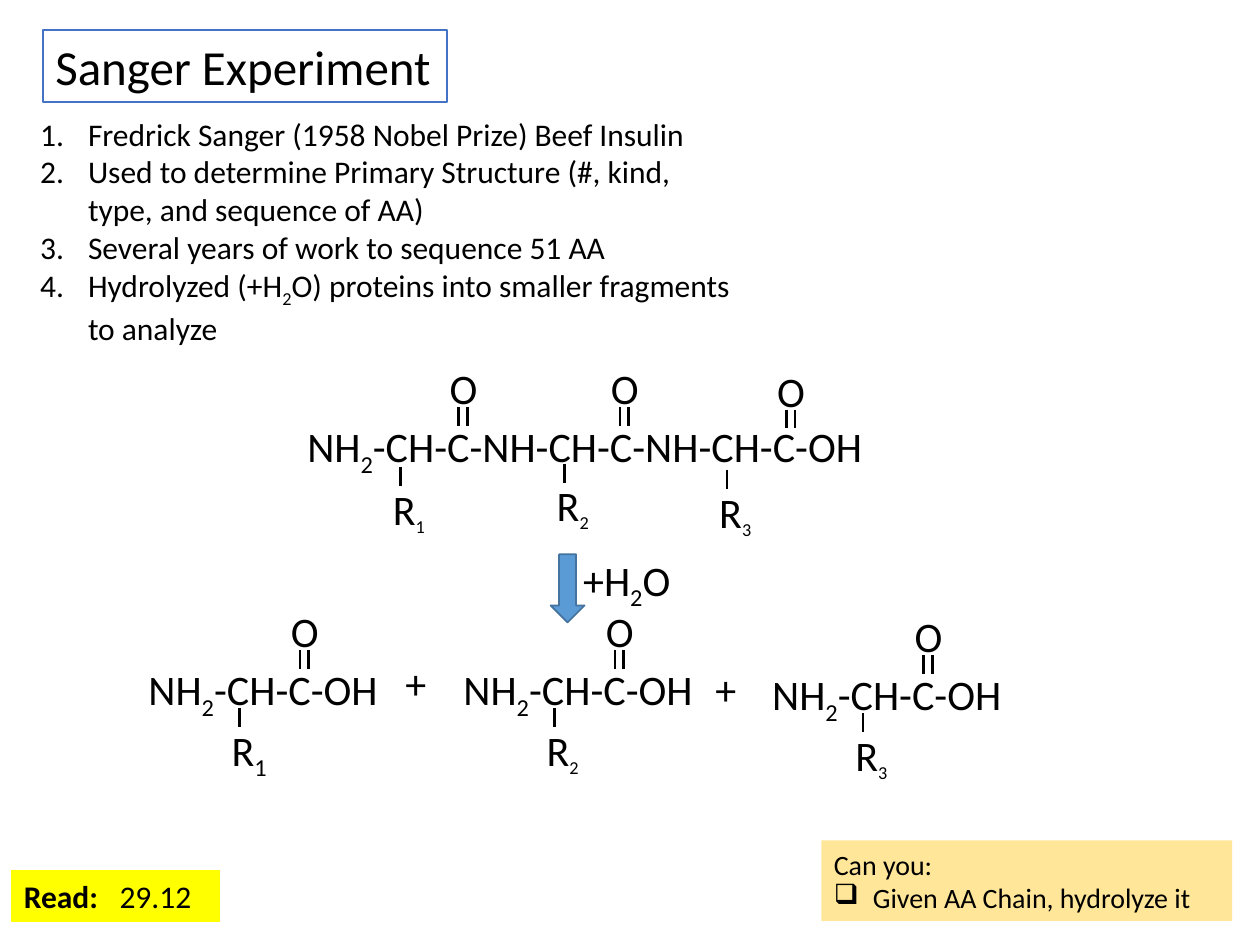
from dataclasses import dataclass
from typing import Any, Optional

import pptx
import pptx.dml.color
import pptx.enum.shapes
import pptx.enum.text
import pptx.oxml.ns
import pptx.util
from lxml import etree

Inches = pptx.util.Inches
Pt = pptx.util.Pt
RGBColor = pptx.dml.color.RGBColor
MSO_SHAPE = pptx.enum.shapes.MSO_SHAPE
qn = pptx.oxml.ns.qn

BLACK = RGBColor(0x00, 0x00, 0x00)
WHITE = RGBColor(0xFF, 0xFF, 0xFF)
TITLE_EDGE = RGBColor(0x44, 0x72, 0xC4)
ARROW_FILL = RGBColor(0x5B, 0x9B, 0xD5)
ARROW_EDGE = RGBColor(0x43, 0x73, 0x9E)
PEACH = RGBColor(0xFF, 0xE6, 0x99)
YELLOW = RGBColor(0xFF, 0xFF, 0x00)


@dataclass(frozen=True)
class Run:
    text: str
    size: float = 24
    sub: bool = False
    bold: bool = False


@dataclass(frozen=True)
class Para:
    runs: tuple[Run, ...]
    bullet: str = ""
    indent: float = 0
    tab: float = 0


@dataclass(frozen=True)
class Box:
    x: float
    y: float
    w: float
    h: float
    fill: RGBColor
    line: Optional[RGBColor] = None
    weight: float = 1
    kind: Any = MSO_SHAPE.RECTANGLE


@dataclass(frozen=True)
class Residue:
    x: float
    y: float
    number: str
    number_size: float = 18


def plain(text: str, size: float = 24) -> Para:
    return Para((Run(text, size),))


def formula(before: str, after: str, size: float = 24) -> tuple[Run, ...]:
    """Runs with a subscript 2 between the two parts."""
    return Run(before, size), Run("2", size, sub=True), Run(after, size)


def format_para(p: Any, para: Para) -> None:
    p.alignment = pptx.enum.text.PP_ALIGN.LEFT
    pPr = p._p.get_or_add_pPr()
    if para.indent:
        pPr.set("marL", str(Inches(para.indent)))
        pPr.set("indent", str(-Inches(para.indent)))
    if para.bullet == "1.":
        etree.SubElement(pPr, qn("a:buAutoNum"), type="arabicPeriod")
    elif para.bullet:
        etree.SubElement(pPr, qn("a:buChar"), char=para.bullet)
    if para.tab:
        tabs = etree.SubElement(pPr, qn("a:tabLst"))
        etree.SubElement(tabs, qn("a:tab"), pos=str(Inches(para.tab)), algn="l")


def write(sp: Any, paras: list[Para], wrap: bool = False) -> None:
    tf = sp.text_frame
    tf.word_wrap = wrap
    tf.auto_size = pptx.enum.text.MSO_AUTO_SIZE.SHAPE_TO_FIT_TEXT
    for i, para in enumerate(paras):
        p = tf.paragraphs[0] if i == 0 else tf.add_paragraph()
        format_para(p, para)
        for run in para.runs:
            r = p.add_run()
            r.text = run.text
            font = {"name": "Calibri", "size": Pt(run.size), "bold": run.bold}
            for name, value in font.items():
                setattr(r.font, name, value)
            r.font.color.rgb = BLACK
            if run.sub:
                r.font._element.set("baseline", "-25000")


def add_text(shapes: Any, x: float, y: float, w: float, h: float,
             paras: list[Para], wrap: bool = False) -> None:
    sp = shapes.add_textbox(Inches(x), Inches(y), Inches(w), Inches(h))
    write(sp, paras, wrap)


def add_box(shapes: Any, box: Box) -> Any:
    sp = shapes.add_shape(box.kind, Inches(box.x), Inches(box.y),
                          Inches(box.w), Inches(box.h))
    sp.shadow.inherit = False
    sp.fill.solid()
    sp.fill.fore_color.rgb = box.fill
    if box.line is None:
        sp.line.fill.background()
    else:
        sp.line.color.rgb = box.line
        sp.line.width = Pt(box.weight)
    return sp


def add_bond(shapes: Any, x: float, y: float) -> None:
    bond = shapes.add_connector(pptx.enum.shapes.MSO_CONNECTOR.STRAIGHT,
                                Inches(x), Inches(y), Inches(x), Inches(y + 0.15))
    bond.line.color.rgb = BLACK
    bond.line.width = Pt(1.5)
    etree.SubElement(bond._element.spPr, qn("a:effectLst"))


def add_carbonyl(shapes: Any, x: float, y: float) -> None:
    """An O with the double bond below it."""
    add_text(shapes, x, y, 0.42, 0.5, [plain("O")])
    for dx in (0.17, 0.24):
        add_bond(shapes, x + dx, y + 0.4)


def add_side_chain(shapes: Any, res: Residue) -> None:
    """A numbered R with the single bond above it."""
    label = Para((Run("R"), Run(res.number, res.number_size, sub=True)))
    width = 0.5 if res.number_size == 24 else 0.47
    add_text(shapes, res.x, res.y, width, 0.5, [label])
    add_bond(shapes, res.x + 0.16, res.y - 0.08)


def add_amino_acid(shapes: Any, res: Residue) -> None:
    add_text(shapes, res.x, res.y, 2.11, 0.5, [Para(formula("NH", "-CH-C-OH"))])
    add_carbonyl(shapes, res.x + 1.13, res.y - 0.46)
    add_side_chain(shapes, Residue(res.x + 0.66, res.y + 0.48,
                                   res.number, res.number_size))


FACTS = [
    (Run("Fredrick Sanger (1958 Nobel Prize) Beef Insulin", 18),),
    (Run("Used to determine Primary Structure (#, kind, type, and sequence of AA)", 18),),
    (Run("Several years of work to sequence 51 AA", 18),),
    formula("Hydrolyzed (+H", "O) proteins into smaller fragments to analyze", 18),
]
CARBONYLS = [(3.47, 2.83), (4.75, 2.83), (6.07, 2.85)]
SIDE_CHAINS = [Residue(3.02, 3.79, "1"), Residue(4.32, 3.76, "2"), Residue(5.61, 3.81, "3")]
AMINO_ACIDS = [Residue(1.08, 5.22, "1", 24), Residue(3.58, 5.22, "2"),
               Residue(6.03, 5.26, "3")]
PLUS_SIGNS = [(3.12, 5.17), (5.58, 5.22)]


def main() -> None:
    prs = pptx.Presentation()
    prs.slide_width, prs.slide_height = Inches(10), Inches(7.5)
    s = prs.slides.add_slide(prs.slide_layouts[6])
    shapes = s.shapes

    add_text(shapes, 0.22, 0.86, 5.72, 1.92,
             [Para(runs, "1.", 0.38) for runs in FACTS], wrap=True)
    title = add_box(shapes, Box(0.34, 0.24, 3.21, 0.57, WHITE, TITLE_EDGE))
    write(title, [plain("Sanger Experiment", 28)])

    add_text(shapes, 2.34, 3.29, 4.72, 0.5,
             [Para(formula("NH", "-CH-C-NH-CH-C-NH-CH-C-OH"))])
    for x, y in CARBONYLS:
        add_carbonyl(shapes.add_group_shape().shapes, x, y)
    add_box(shapes, Box(4.37, 4.4, 0.27, 0.54, ARROW_FILL, ARROW_EDGE,
                        kind=MSO_SHAPE.DOWN_ARROW))
    add_text(shapes, 4.53, 4.35, 0.92, 0.5, [Para(formula("+H", "O"))])
    for res in SIDE_CHAINS:
        add_side_chain(shapes.add_group_shape().shapes, res)

    for res in AMINO_ACIDS:
        add_amino_acid(shapes.add_group_shape().shapes, res)
    for x, y in PLUS_SIGNS:
        add_text(shapes, x, y, 0.37, 0.5, [plain("+")])

    task = add_box(shapes, Box(6.52, 6.67, 3.26, 0.64, PEACH))
    write(task, [plain("Can you:", 16),
                 Para((Run("Given AA Chain, hydrolyze it", 16),), "❑", 0.31)], wrap=True)
    reading = add_box(shapes, Box(0.09, 6.91, 1.65, 0.4, YELLOW, YELLOW, 0.75))
    write(reading, [Para((Run("Read:\t", 18, bold=True), Run("29.12", 18)), tab=0.76)],
          wrap=True)

    prs.save("out.pptx")


if __name__ == "__main__":
    main()
